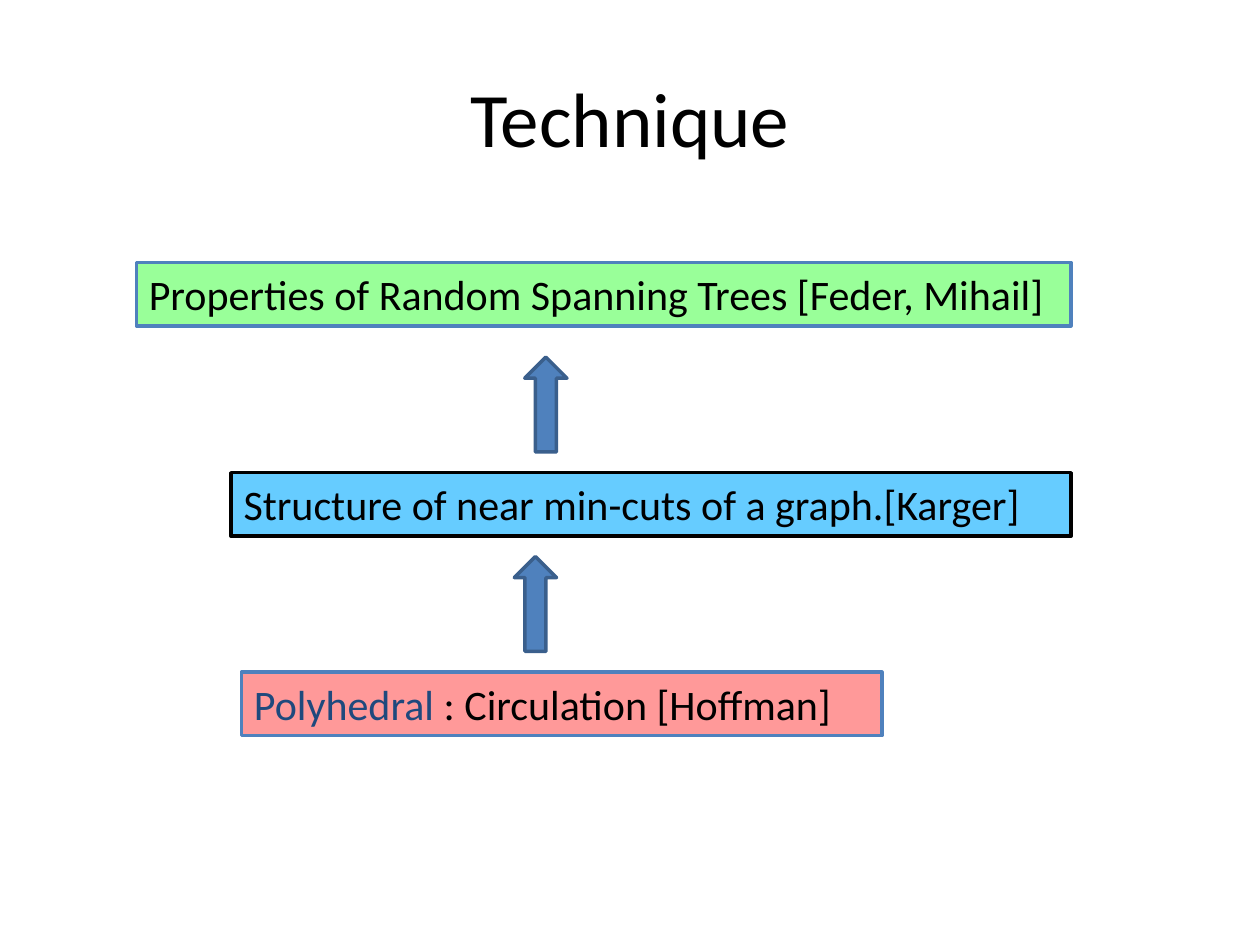
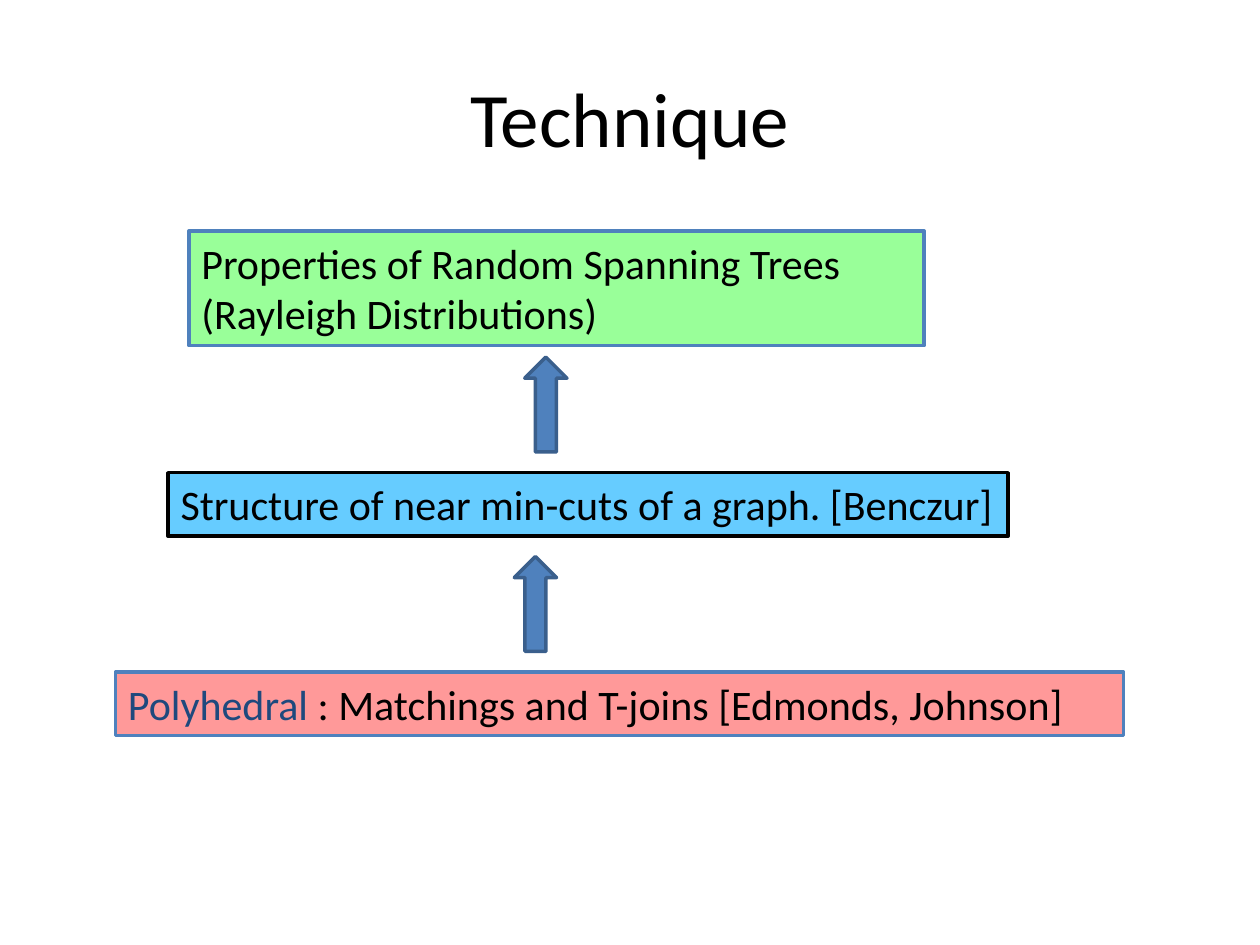
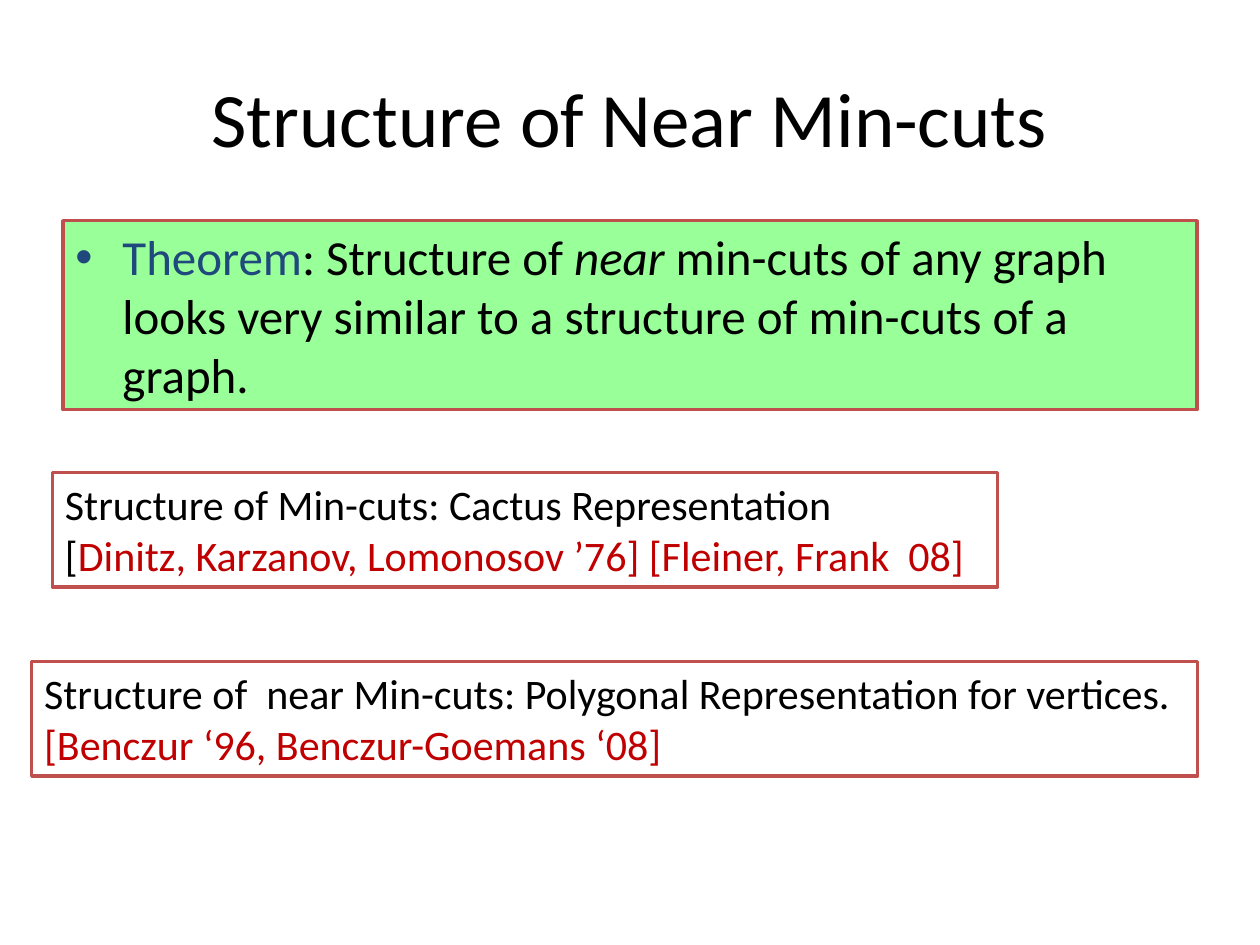
from lxml import etree
from pptx import Presentation
from pptx.dml.color import RGBColor
from pptx.enum.shapes import MSO_SHAPE
from pptx.enum.text import MSO_ANCHOR, MSO_AUTO_SIZE, PP_ALIGN
from pptx.oxml.ns import qn
from pptx.util import Cm, Pt

RECTANGLE = MSO_SHAPE.RECTANGLE
UP_ARROW = MSO_SHAPE.UP_ARROW
TOP, MIDDLE = MSO_ANCHOR.TOP, MSO_ANCHOR.MIDDLE
GROW, FIXED = MSO_AUTO_SIZE.SHAPE_TO_FIT_TEXT, MSO_AUTO_SIZE.NONE
LEFT, CENTER = PP_ALIGN.LEFT, PP_ALIGN.CENTER

TITLE_ONLY = 5
FONT = "Calibri"
COLORS = {
    "black": "000000",
    "white": "FFFFFF",
    "green": "99FF99",
    "pink": "FF9999",
    "sky": "66CCFF",
    "blue": "4F81BD",
    "dark_blue": "3A5F8C",
    "navy": "1F497D",
    "brick": "C0504D",
    "red": "C00000",
}
ONE_LINE, TWO_LINES = 1.28, 2.31
STRUCTURE_TOP, POLYHEDRAL_TOP = 9.53, 13.55


def color(name):
    """Return the named colour."""
    return RGBColor.from_string(COLORS[name])


def add_text(paragraph, text, size=24, fill="black", italic=False):
    """Append a formatted run to the paragraph."""
    run = paragraph.add_run()
    run.text = text
    run.font.name = FONT
    run.font.size = Pt(size)
    run.font.italic = italic
    run.font.color.rgb = color(fill)


class Deck:
    """Holds the shared style and the current slide."""

    def __init__(self):
        """Start an empty 4:3 presentation."""
        self.presentation = Presentation()
        self.presentation.slide_width = Cm(25.4)
        self.presentation.slide_height = Cm(19.05)
        self.slide = None

    def new_slide(self, title):
        """Add a slide and set its centred title."""
        layout = self.presentation.slide_layouts[TITLE_ONLY]
        self.slide = self.presentation.slides.add_slide(layout)
        shape = self.slide.shapes.title
        shape.left, shape.top = Cm(1.27), Cm(0.76)
        shape.width, shape.height = Cm(22.86), Cm(3.18)
        shape.text_frame.vertical_anchor = MIDDLE
        paragraph = shape.text_frame.paragraphs[0]
        paragraph.alignment = CENTER
        add_text(paragraph, title, size=44)

    def shape(self, kind, left, top, width, height, fill, line):
        """Add a flat outlined shape."""
        shape = self.slide.shapes.add_shape(kind, Cm(left), Cm(top), Cm(width), Cm(height))
        shape.shadow.inherit = False
        shape.fill.solid()
        shape.fill.fore_color.rgb = color(fill)
        shape.line.color.rgb = color(line)
        shape.line.width = Pt(2)
        return shape

    def box(self, left, top, width, height, paragraphs, fill="white", line="brick",
            size=24, bullet=False):
        """Add a box whose paragraphs are lists of (text, format) runs."""
        shape = self.shape(RECTANGLE, left, top, width, height, fill, line)
        frame = shape.text_frame
        frame.word_wrap = True
        frame.vertical_anchor = TOP
        frame.auto_size = FIXED if bullet else GROW
        for index, runs in enumerate(paragraphs):
            paragraph = frame.add_paragraph() if index else frame.paragraphs[0]
            paragraph.alignment = LEFT
            if bullet:
                self.bullet(paragraph)
            for text, options in runs:
                add_text(paragraph, text, size=size, **options)

    def bullet(self, paragraph):
        """Give the paragraph a hanging bullet."""
        properties = paragraph._p.get_or_add_pPr()
        properties.set("marL", str(Cm(0.95)))
        properties.set("indent", str(-Cm(0.95)))
        etree.SubElement(properties, qn("a:buFont")).set("typeface", "Arial")
        etree.SubElement(properties, qn("a:buChar")).set("char", "•")

    def arrow(self, left, top):
        """Add an upward block arrow."""
        self.shape(UP_ARROW, left, top, 0.85, 1.91, "blue", "dark_blue")

    def technique(self, properties, polyhedral, structure):
        """Add a slide of three boxes joined by arrows."""
        self.new_slide("Technique")
        left, top, width, height, text = properties
        self.box(left, top, width, height, [[(text, {})]], "green", "blue")
        left, width, text = polyhedral
        runs = [("Polyhedral", {"fill": "navy"}), (text, {})]
        self.box(left, POLYHEDRAL_TOP, width, ONE_LINE, [runs], "pink", "blue")
        left, text = structure
        self.box(left, STRUCTURE_TOP, 16.93, ONE_LINE, [[(text, {})]], "sky", "black")
        self.arrow(10.37, 11.22)
        self.arrow(10.58, 7.2)


def main():
    """Build and save the three slides."""
    deck = Deck()
    deck.technique(
        (2.75, 5.29, 18.84, ONE_LINE, "Properties of Random Spanning Trees [Feder, Mihail]"),
        (4.87, 12.91, " : Circulation [Hoffman]"),
        (4.66, "Structure of near min-cuts of a graph.[Karger]"),
    )
    deck.technique(
        (3.81, 4.66, 14.82, TWO_LINES,
         "Properties of Random Spanning Trees (Rayleigh Distributions)"),
        (2.33, 20.32, " : Matchings and T-joins [Edmonds, Johnson]"),
        (3.39, "Structure of near min-cuts of a graph. [Benczur]"),
    )

    deck.new_slide("Structure of Near Min-cuts")
    theorem = [
        ("Theorem", {"fill": "navy"}),
        (": Structure of ", {}),
        ("near", {"italic": True}),
        (" min-cuts of any graph looks very similar to a structure of min-cuts of a graph.", {}),
    ]
    deck.box(1.27, 4.45, 22.86, 3.81, [theorem], "green", size=28, bullet=True)
    deck.box(1.06, STRUCTURE_TOP, 19.05, TWO_LINES, [
        [("Structure of Min-cuts: Cactus Representation", {})],
        [("[", {}),
         ("Dinitz, Karzanov, Lomonosov ’76] [Fleiner, Frank  08]", {"fill": "red"})],
    ])
    deck.box(0.64, 13.34, 23.5, TWO_LINES, [
        [("Structure of  near Min-cuts: Polygonal Representation for vertices.", {})],
        [("[Benczur ‘96, Benczur-Goemans ‘08]", {"fill": "red"})],
    ])
    deck.presentation.save("out.pptx")


if __name__ == "__main__":
    main()
